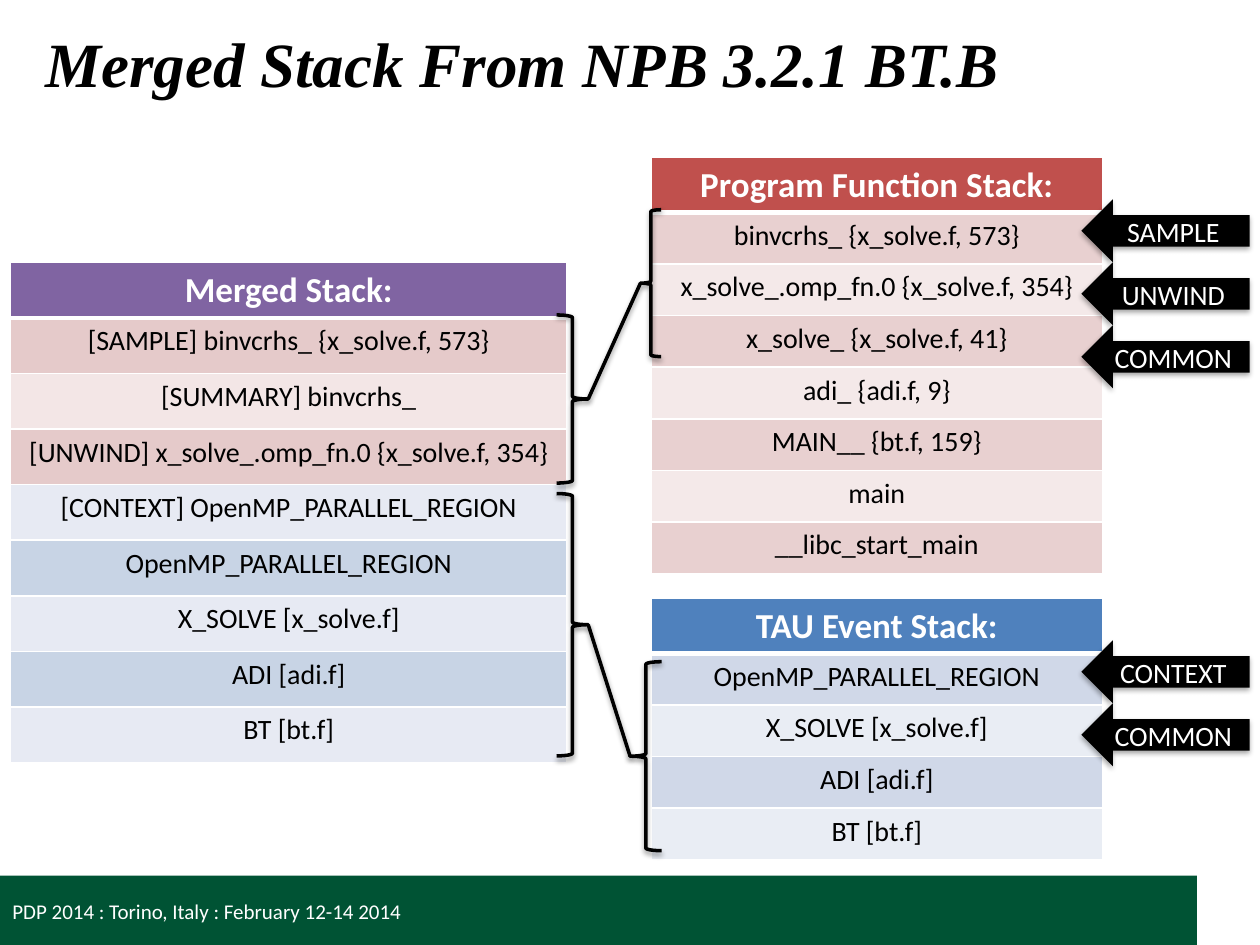
from dataclasses import dataclass
from itertools import cycle

from lxml.etree import SubElement
from pptx import Presentation
from pptx.dml.color import RGBColor
from pptx.enum.shapes import MSO_CONNECTOR, MSO_SHAPE
from pptx.enum.text import MSO_ANCHOR, MSO_AUTO_SIZE, PP_ALIGN
from pptx.oxml.ns import qn
from pptx.util import Cm, Pt


@dataclass(frozen=True)
class Theme:
    sans: str = "Calibri"
    serif: str = "Times New Roman"
    black: str = "000000"
    white: str = "FFFFFF"
    green: str = "005334"
    blue: str = "4F81BD"
    red: str = "C0504D"
    purple: str = "8064A2"
    blues: tuple = ("D0D8E8", "E9EDF4")
    reds: tuple = ("E8D0D0", "F4E9E9")
    mix_reds: tuple = ("E5CACA", "F3E6E6")
    mix_blues: tuple = ("E7EAF3", "C8D4E5")
    title: int = 36
    head: int = 20
    text: int = 16
    foot: int = 12


class Board:
    def __init__(self, slide, theme):
        self.slide, self.theme = slide, theme
        self.shapes = slide.shapes

    def label(self, frame, text, size, color, align=PP_ALIGN.CENTER,
              face=None, bold=False, italic=False):
        frame.text = text
        para = frame.paragraphs[0]
        para.alignment = align
        font = para.font
        font.name, font.size = face or self.theme.sans, Pt(size)
        font.bold, font.italic = bold, italic
        font.color.rgb = RGBColor.from_string(color)

    def paint(self, fill, color):
        fill.solid()
        fill.fore_color.rgb = RGBColor.from_string(color)

    def shade(self, shape, alpha):
        """Soft shadow straight below the shape."""
        effects = SubElement(shape._element.spPr, qn("a:effectLst"))
        shadow = SubElement(effects, qn("a:outerShdw"), blurRad=str(Pt(3.1)),
                            dist=str(Pt(1.7)), dir="5400000", rotWithShape="0")
        color = SubElement(shadow, qn("a:srgbClr"), val=self.theme.black)
        SubElement(color, qn("a:alpha"), val=str(alpha * 1000))

    def stroke(self, shape):
        shape.line.color.rgb = RGBColor.from_string(self.theme.black)
        shape.line.width = Pt(2)
        self.shade(shape, 38)

    def title(self, text, *box):
        holder = self.shapes.title
        holder.left, holder.top, holder.width, holder.height = map(Cm, box)
        frame = holder.text_frame
        frame.auto_size = MSO_AUTO_SIZE.NONE
        frame.vertical_anchor = MSO_ANCHOR.MIDDLE
        self.label(frame, text, self.theme.title, self.theme.black,
                   PP_ALIGN.LEFT, self.theme.serif, True, True)

    def bar(self, *box):
        shape = self.shapes.add_shape(MSO_SHAPE.RECTANGLE, *map(Cm, box))
        shape.shadow.inherit = False
        self.paint(shape.fill, self.theme.green)
        shape.line.fill.background()

    def footer(self, text, *box):
        frame = self.shapes.add_textbox(*map(Cm, box)).text_frame
        frame.word_wrap = True
        frame.vertical_anchor = MSO_ANCHOR.MIDDLE
        self.label(frame, text, self.theme.foot, self.theme.white, PP_ALIGN.LEFT)

    def border(self, cell, top, bottom):
        props = cell._tc.get_or_add_tcPr()
        for side, width in zip("LRTB", (1, 1, top, bottom)):
            line = SubElement(props, qn(f"a:ln{side}"), w=str(Pt(width)))
            fill = SubElement(line, qn("a:solidFill"))
            SubElement(fill, qn("a:srgbClr"), val=self.theme.white)

    def stack(self, head, color, rows, left, top, width, step):
        """One-column table: a coloured head above (text, fill) rows."""
        rows = [(head, color), *rows]
        table = self.shapes.add_table(len(rows), 1, Cm(left), Cm(top), Cm(width),
                                      Cm(step * len(rows))).table
        table.horz_banding = False
        for i, (text, fill) in enumerate(rows):
            cell = table.cell(i, 0)
            self.border(cell, 3 if i == 1 else 1, 3 if i == 0 else 1)
            self.paint(cell.fill, fill)
            if i == 0:
                self.label(cell.text_frame, text, self.theme.head,
                           self.theme.white, bold=True)
            else:
                self.label(cell.text_frame, text, self.theme.text, self.theme.black)

    def arrow(self, text, *box):
        shape = self.shapes.add_shape(MSO_SHAPE.LEFT_ARROW, *map(Cm, box))
        self.paint(shape.fill, self.theme.black)
        shape.line.fill.background()
        self.shade(shape, 35)
        shape.text_frame.vertical_anchor = MSO_ANCHOR.MIDDLE
        self.label(shape.text_frame, text, self.theme.text, self.theme.white)

    def brace(self, kind, *box):
        shape = self.shapes.add_shape(kind, *map(Cm, box))
        shape.fill.background()
        self.stroke(shape)

    def link(self, *ends):
        self.stroke(self.shapes.add_connector(MSO_CONNECTOR.STRAIGHT, *map(Cm, ends)))


def main():
    deck = Presentation()
    deck.slide_width, deck.slide_height = Cm(25.4), Cm(19.05)
    theme = Theme()
    board = Board(deck.slides.add_slide(deck.slide_layouts[5]), theme)

    # Title and footer
    board.bar(0, 17.65, 24.13, 1.4)
    board.footer("PDP 2014 : Torino, Italy : February 12-14 2014", 0, 17.7, 16.71, 1.35)
    board.title("Merged Stack From NPB 3.2.1 BT.B", 0.66, 0.03, 24.74, 2.44)

    # Source stacks on the right
    events = ["OpenMP_PARALLEL_REGION", "X_SOLVE [x_solve.f]", "ADI [adi.f]", "BT [bt.f]"]
    calls = ["binvcrhs_ {x_solve.f, 573}", "x_solve_.omp_fn.0 {x_solve.f, 354}",
             "x_solve_ {x_solve.f, 41}", "adi_ {adi.f, 9}", "MAIN__ {bt.f, 159}",
             "main", "__libc_start_main"]
    board.stack("TAU Event Stack:", theme.blue, zip(events, cycle(theme.blues)),
                13.13, 12.07, 9.09, 1.04)
    board.stack("Program Function Stack:", theme.red, zip(calls, cycle(theme.reds)),
                13.13, 3.18, 9.09, 1.04)

    # Merged stack on the left
    samples = ["[SAMPLE] binvcrhs_ {x_solve.f, 573}", "[SUMMARY] binvcrhs_",
               "[UNWIND] x_solve_.omp_fn.0 {x_solve.f, 354}"]
    regions = ["[CONTEXT] OpenMP_PARALLEL_REGION", *events]
    board.stack("Merged Stack:", theme.purple,
                [*zip(samples, cycle(theme.mix_reds)),
                 *zip(regions, cycle(theme.mix_blues))],
                0.21, 5.29, 11.22, 1.12)

    # Labels pointing at the rows
    for top, names in ((4.02, ("SAMPLE", "UNWIND", "COMMON")),
                       (12.91, ("CONTEXT", "COMMON"))):
        for i, name in enumerate(names):
            board.arrow(name, 21.8, top + 1.27 * i, 3.39, 1.27)

    # Braces and the lines between them
    board.brace(MSO_SHAPE.LEFT_BRACE, 12.7, 13.34, 0.64, 3.81)
    board.brace(MSO_SHAPE.LEFT_BRACE, 12.91, 4.23, 0.42, 2.96)
    board.brace(MSO_SHAPE.RIGHT_BRACE, 11.22, 6.35, 0.64, 3.39)
    board.brace(MSO_SHAPE.RIGHT_BRACE, 11.22, 9.95, 0.64, 5.29)
    board.link(12.91, 5.71, 11.86, 8.04)
    board.link(11.86, 12.6, 12.7, 15.24)

    deck.save("out.pptx")


if __name__ == "__main__":
    main()
